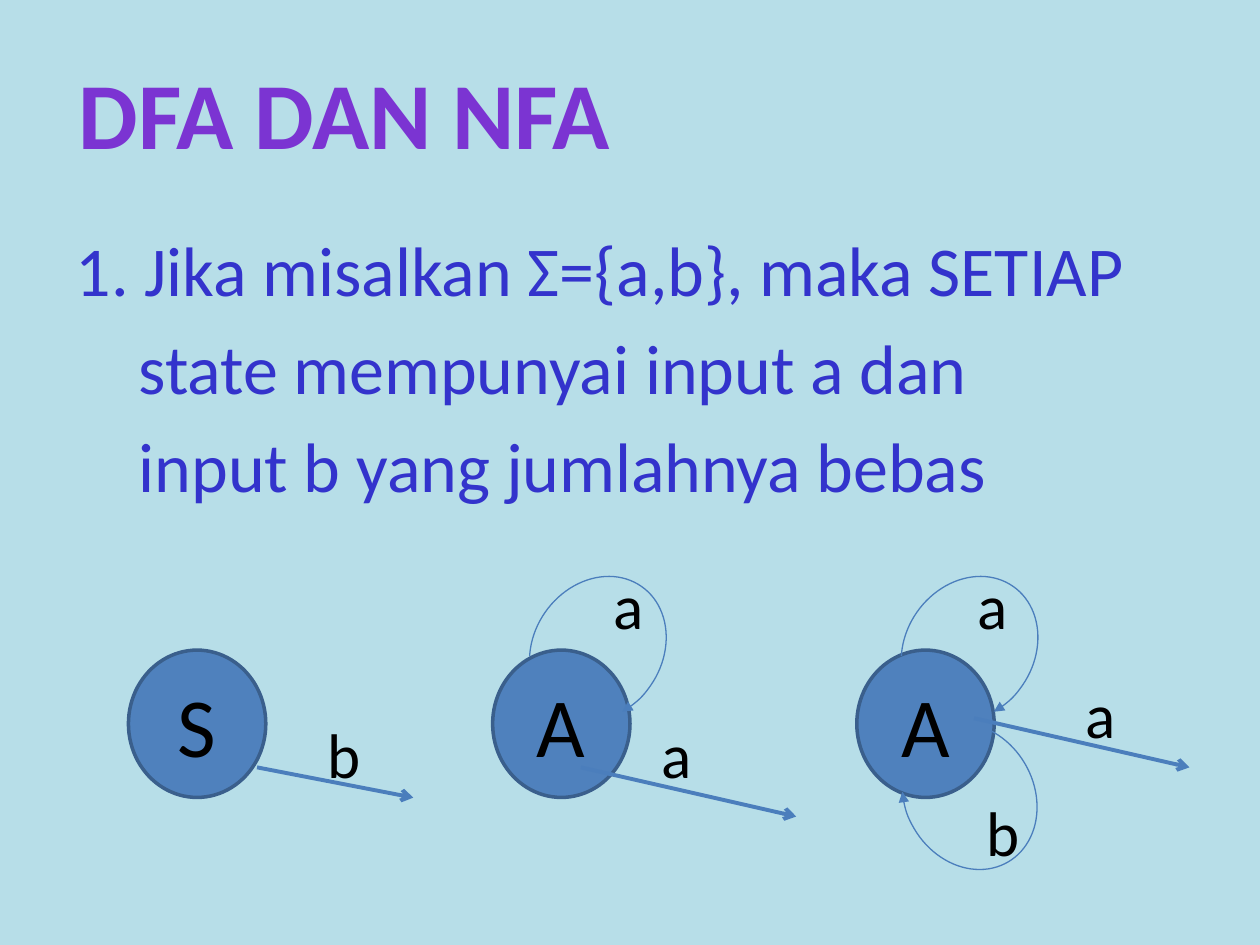
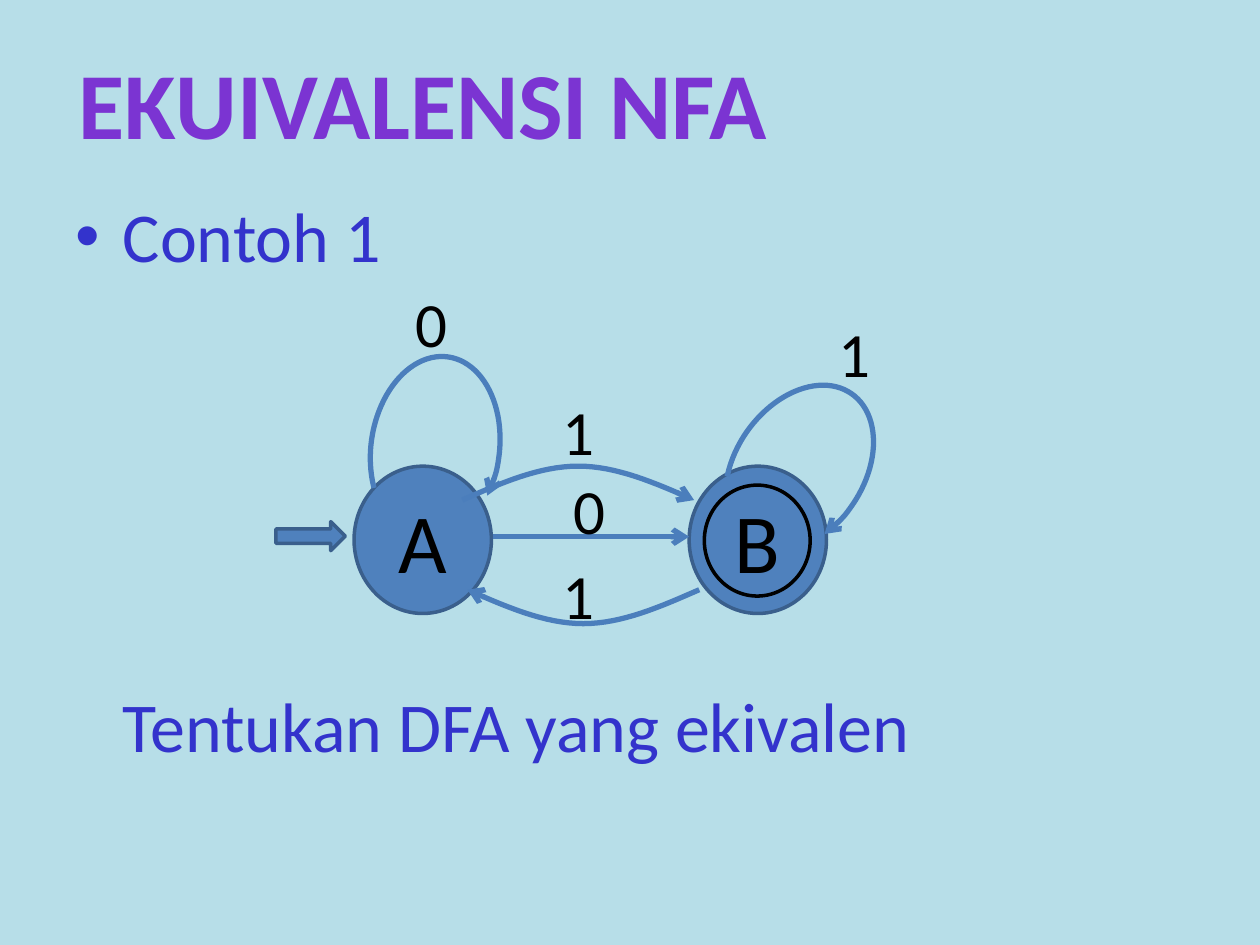
import lxml.etree
import pptx
import pptx.dml.color
import pptx.enum.shapes
import pptx.enum.text
import pptx.oxml.ns
import pptx.util

Pt = pptx.util.Pt
qn = pptx.oxml.ns.qn
SHAPES = pptx.enum.shapes.MSO_SHAPE
ALIGN = pptx.enum.text.PP_ALIGN
ANCHOR = pptx.enum.text.MSO_ANCHOR
AUTO_SIZE = pptx.enum.text.MSO_AUTO_SIZE

FONT = "Calibri"
COLORS = {
    "background": "B7DEE8",
    "title": "7B34D2",
    "body": "3333CC",
    "text": "000000",
    "state": "4F81BD",
    "state_edge": "3A5F8C",
    "transition": "4B7EBC",
}
STATE_WIDTH, STATE_HEIGHT = 78.5, 84.2
LOOP_ANGLES = (229.24, 124.1)
HANGING = 27
LINE_GAP = 8


def rgb(name):
    return pptx.dml.color.RGBColor.from_string(COLORS[name])


# Shared formatting
def set_font(para, size, color, bold=False):
    font = para.font
    font.name, font.size, font.bold = FONT, Pt(size), bold
    font.color.rgb = rgb(color)


def set_line(shape, color, width, arrowhead=None):
    shape.line.color.rgb = rgb(color)
    shape.line.width = Pt(width)
    if arrowhead:
        line = shape._element.spPr.find(qn("a:ln"))
        lxml.etree.SubElement(line, qn("a:tailEnd"), type=arrowhead)


def place(shape, left, top, width, height):
    shape.left, shape.top = Pt(left), Pt(top)
    shape.width, shape.height = Pt(width), Pt(height)


# Title and body placeholders
def add_page(deck, title, title_top, title_width, body_top, body_height):
    page = deck.slides.add_slide(deck.slide_layouts[1])
    heading, body = page.placeholders
    place(heading, 36, title_top, title_width, 72.7)
    frame = heading.text_frame
    frame.text = title
    frame.word_wrap = False
    frame.auto_size = AUTO_SIZE.NONE
    frame.vertical_anchor = ANCHOR.TOP
    frame.paragraphs[0].alignment = ALIGN.CENTER
    set_font(frame.paragraphs[0], 54, "title", bold=True)

    place(body, 36, body_top, 648, body_height)
    body.text_frame.auto_size = AUTO_SIZE.NONE
    return page, body.text_frame


def add_body_lines(frame, lines):
    """Each line is (text, left margin, first-line indent, space before, bullet)."""
    for index, (text, margin, indent, gap, bullet) in enumerate(lines):
        para = frame.paragraphs[0] if index == 0 else frame.add_paragraph()
        para.text = text
        para.space_before = Pt(gap)
        properties = para._p.get_or_add_pPr()
        properties.set("marL", str(Pt(margin)))
        properties.set("indent", str(Pt(indent)))
        if bullet:
            mark = lxml.etree.SubElement(properties, qn("a:buChar"))
            mark.set("char", bullet)
        else:
            lxml.etree.SubElement(properties, qn("a:buNone"))
        set_font(para, 40, "body")


# Automaton elements
def add_preset(page, kind, left, top, width, height, fill=None):
    shape = page.shapes.add_shape(kind, Pt(left), Pt(top), Pt(width), Pt(height))
    shape.shadow.inherit = False
    if fill:
        shape.fill.solid()
        shape.fill.fore_color.rgb = rgb(fill)
    else:
        shape.fill.background()
    return shape


def add_state(page, name, left, top):
    state = add_preset(page, SHAPES.OVAL, left, top, STATE_WIDTH, STATE_HEIGHT, "state")
    set_line(state, "state_edge", 2)
    frame = state.text_frame
    frame.margin_left = frame.margin_right = frame.margin_top = frame.margin_bottom = 0
    frame.word_wrap = False
    frame.vertical_anchor = ANCHOR.MIDDLE
    para = frame.paragraphs[0]
    para.text = name
    para.alignment = ALIGN.CENTER
    set_font(para, 48, "text")


def add_label(page, symbol, left, top):
    box = page.shapes.add_textbox(Pt(left), Pt(top), Pt(39.6), Pt(51))
    box.text_frame.word_wrap = True
    para = box.text_frame.paragraphs[0]
    para.text = symbol
    set_font(para, 36, "text")


def add_loop(page, left, top, width, rotation, line_width, arrowhead):
    loop = add_preset(page, SHAPES.ARC, left, top, width, 73.4)
    for index, degrees in enumerate(LOOP_ANGLES):
        loop.adjustments[index] = degrees * 0.6  # 60000 units per degree / 100000
    loop.rotation = rotation
    set_line(loop, "transition", line_width, arrowhead)


def add_arrow(page, start, end, line_width):
    arrow = page.shapes.add_connector(
        pptx.enum.shapes.MSO_CONNECTOR.STRAIGHT, *map(Pt, start + end))
    set_line(arrow, "transition", line_width, "arrow")
    lxml.etree.SubElement(arrow._element.spPr, qn("a:effectLst"))


def add_bow(page, start_left, end_left, level, depth, steps=32):
    """Symmetric curved transition; a negative depth bows upwards."""
    points = []
    for step in range(steps + 1):
        part = step / steps
        rise = 1 - abs(2 * part - 1)
        left = start_left + (end_left - start_left) * part
        points.append((Pt(left), Pt(level + depth * (1.5 * rise - 0.5 * rise ** 3))))
    builder = page.shapes.build_freeform(*points[0])
    builder.add_line_segments(points[1:], close=False)
    bow = builder.convert_to_shape()
    bow.shadow.inherit = False
    bow.fill.background()
    set_line(bow, "transition", 3, "arrow")


# Slides
def build_comparison(deck):
    page, frame = add_page(deck, "DFA DAN NFA", 28.1, 321.8, 126, 385.9)
    add_body_lines(frame, [
        ("1. Jika misalkan Σ={a,b}, maka SETIAP", HANGING, -HANGING, 0, None),
        ("state mempunyai input a dan", HANGING + 9, 0, LINE_GAP, None),
        ("input b yang jumlahnya bebas", HANGING + 9, 0, LINE_GAP, None),
    ])
    for index, name in enumerate("SAA"):
        add_state(page, name, 73.4 + 208.1 * index, 371.5)
    for left, top, rotation in ((298.1, 334.1, 304.8), (510.5, 334.1, 304.8),
                                (510.5, 418.3, 59.6)):
        add_loop(page, left, top, 87.1, rotation, 0.75, "triangle")
    for start, end in (((146.9, 438.5), (236.2, 455.8)),
                       ((331.9, 438.5), (455, 466.6)),
                       ((556.6, 410.4), (679.7, 438.5))):
        add_arrow(page, start, end, 2.25)
    for symbol, left, top in (("b", 180, 405.4), ("a", 343.4, 320.4),
                              ("a", 370.8, 405.4), ("a", 551.5, 320.4),
                              ("b", 556.6, 450), ("a", 613.4, 382.3)):
        add_label(page, symbol, left, top)


def build_equivalence(deck):
    page, frame = add_page(deck, "EKUIVALENSI NFA", 22.3, 411.8, 106.6, 393.8)
    add_body_lines(frame, [
        ("Contoh 1", HANGING, -HANGING, 0, "•"),
        ("Tentukan DFA yang ekivalen", HANGING, 0, 232, None),
    ])
    entry = add_preset(page, SHAPES.RIGHT_ARROW, 157.7, 298.1, 39.6, 16.6, "state")
    set_line(entry, "state_edge", 2)
    add_state(page, "A", 202.3, 266.4)
    add_state(page, "B", 393.8, 266.4)
    final_ring = add_preset(page, SHAPES.OVAL, 402.5, 277.2, 60.5, 63.4)
    set_line(final_ring, "text", 2)

    add_arrow(page, (281.5, 306.7), (393.8, 306.7), 3)
    add_bow(page, 399.6, 267.1, 337, 19.4)
    add_bow(page, 264.2, 396.7, 285.8, -19.4)
    add_loop(page, 404.6, 231.1, 104.4, 304.8, 3, "arrow")
    add_loop(page, 195.8, 219.6, 105.8, 278, 3, "arrow")
    for symbol, left, top in (("1", 314.6, 314.6), ("0", 230.4, 159.1),
                              ("0", 320.4, 265.7), ("1", 472.3, 176.4),
                              ("1", 314.6, 221)):
        add_label(page, symbol, left, top)


def main():
    deck = pptx.Presentation()
    deck.slide_width, deck.slide_height = Pt(720), Pt(540)
    fill = deck.slide_master.background.fill
    fill.solid()
    fill.fore_color.rgb = rgb("background")
    build_comparison(deck)
    build_equivalence(deck)
    deck.save("out.pptx")


if __name__ == "__main__":
    main()
